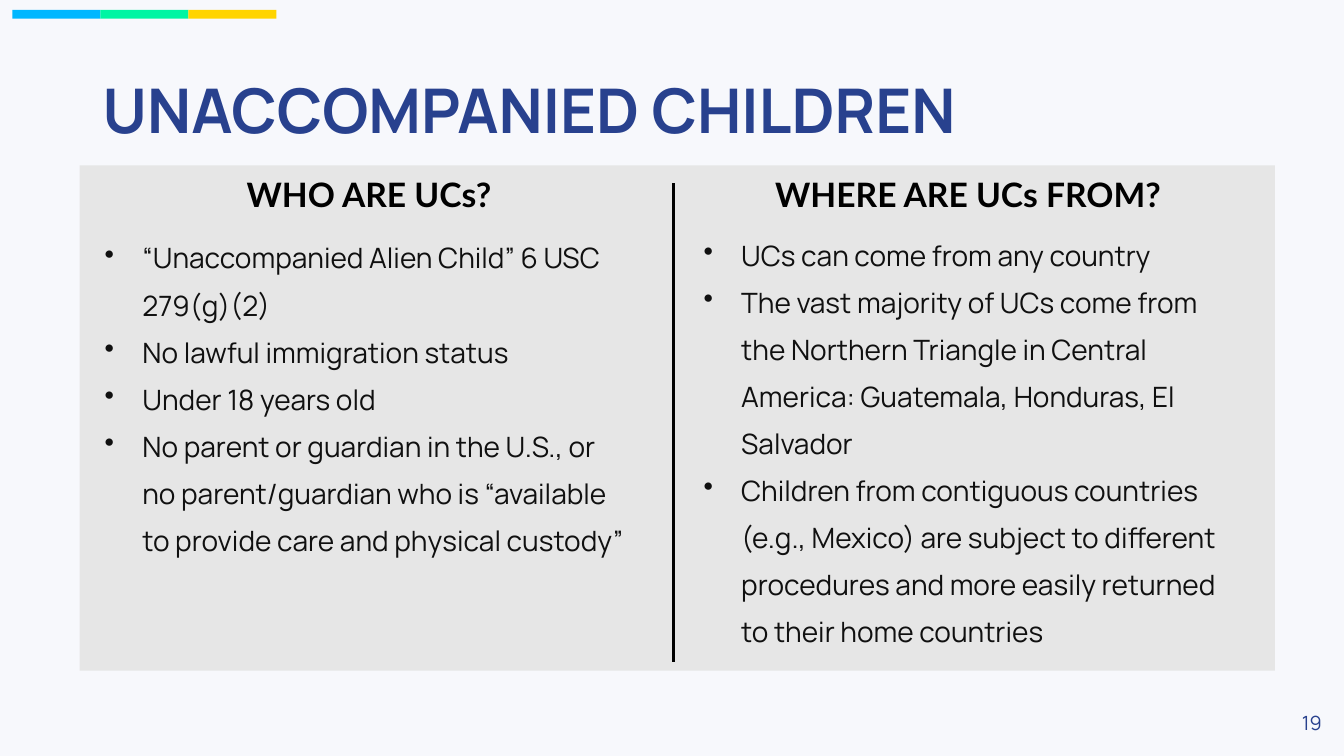
from lxml.etree import SubElement
from pptx import Presentation
from pptx.dml.color import RGBColor
from pptx.enum.shapes import MSO_CONNECTOR as Connector, MSO_SHAPE as Shape
from pptx.enum.text import MSO_ANCHOR as Anchor, PP_ALIGN as Align
from pptx.oxml.ns import qn
from pptx.util import Cm, Pt

BACKGROUND = RGBColor(0xF7, 0xF8, 0xFC)
NAVY = RGBColor(0x28, 0x41, 0x8E)
PANEL_GREY = RGBColor(0xE6, 0xE6, 0xE6)
INK = RGBColor(0x10, 0x10, 0x10)
BLACK = RGBColor(0x00, 0x00, 0x00)
ACCENTS = (
    RGBColor(0x00, 0xB7, 0xFF),
    RGBColor(0x00, 0xF5, 0xA3),
    RGBColor(0xFF, 0xD4, 0x00),
)
ACCENT_WIDTH = 2.22
BULLET_INDENT = Cm(0.95)

WHO_POINTS = (
    "“Unaccompanied Alien Child” 6 USC 279(g)(2)",
    "No lawful immigration status",
    "Under 18 years old",
    "No parent or guardian in the U.S., or no parent/guardian who is "
    "“available to provide care and physical custody”",
)
WHERE_POINTS = (
    "UCs can come from any country",
    "The vast majority of UCs come from the Northern Triangle in Central "
    "America: Guatemala, Honduras, El Salvador",
    "Children from contiguous countries (e.g., Mexico) are subject to different "
    "procedures and more easily returned to their home countries",
)


def add_block(slide, left, top, width, height, color):
    """Draw a plain filled rectangle."""
    block = slide.shapes.add_shape(
        Shape.RECTANGLE, Cm(left), Cm(top), Cm(width), Cm(height))
    block.shadow.inherit = False
    block.fill.solid()
    block.fill.fore_color.rgb = color
    block.line.fill.background()


def add_bullet(paragraph, color):
    """Give a paragraph a hanging coloured bullet."""
    properties = paragraph._p.get_or_add_pPr()
    properties.set("marL", str(BULLET_INDENT))
    properties.set("indent", str(-BULLET_INDENT))
    bullet_color = SubElement(properties, qn("a:buClr"))
    SubElement(bullet_color, qn("a:srgbClr"), val=str(color))
    SubElement(properties, qn("a:buChar"), char="•")


def add_text(slide, lines, left, top, width, height, *, size, color,
             font="Manrope", bold=False, align=Align.LEFT, anchor=Anchor.TOP,
             spacing=None, bullets=False):
    """Add a text box with one paragraph per line."""
    box = slide.shapes.add_textbox(Cm(left), Cm(top), Cm(width), Cm(height))
    frame = box.text_frame
    frame.word_wrap = True
    frame.vertical_anchor = anchor
    for index, line in enumerate(lines):
        paragraph = frame.add_paragraph() if index else frame.paragraphs[0]
        if bullets:
            add_bullet(paragraph, color)
        paragraph.alignment = align
        paragraph.line_spacing = spacing
        run = paragraph.add_run()
        run.text = line
        run.font.name = font
        run.font.size = Pt(size)
        run.font.bold = bold
        run.font.color.rgb = color


def add_divider(slide, x, top, bottom):
    """Draw the vertical rule between the columns."""
    divider = slide.shapes.add_connector(
        Connector.STRAIGHT, Cm(x), Cm(top), Cm(x), Cm(bottom))
    divider.line.color.rgb = BLACK
    divider.line.width = Pt(1.75)
    SubElement(divider._element.spPr, qn("a:effectLst"))


def add_heading(slide, heading, left, width):
    """Add a centred column heading."""
    add_text(slide, [heading], left, 4.27, width, 1.27, size=24, color=BLACK,
             font="Lato", bold=True, align=Align.CENTER)


def add_points(slide, points, left, top, width, height):
    """Add the bulleted points of a column."""
    add_text(slide, points, left, top, width, height, size=20, color=INK,
             spacing=1.4, bullets=True)


def main():
    """Build the slide and save it."""
    deck = Presentation()
    deck.slide_width, deck.slide_height = Cm(33.87), Cm(19.05)
    slide = deck.slides.add_slide(deck.slide_layouts[6])
    slide.background.fill.solid()
    slide.background.fill.fore_color.rgb = BACKGROUND

    for index, accent in enumerate(ACCENTS):
        add_block(slide, 0.31 + index * ACCENT_WIDTH, 0.25, ACCENT_WIDTH, 0.22, accent)
    add_text(slide, ["UNACCOMPANIED CHILDREN"], 2.34, 1.02, 26.77, 3.68, size=44,
             color=NAVY, bold=True, anchor=Anchor.MIDDLE, spacing=0.9)
    add_text(slide, ["19"], 32.11, 17.78, 1.45, 0.86, size=14, color=NAVY,
             align=Align.RIGHT)

    add_block(slide, 2.01, 4.17, 30.12, 12.73, PANEL_GREY)
    add_heading(slide, "WHO ARE UCs?", 2.39, 13.82)
    add_points(slide, WHO_POINTS, 2.39, 5.61, 13.82, 7.16)
    add_heading(slide, "WHERE ARE UCs FROM?", 17.32, 14.15)
    add_points(slide, WHERE_POINTS, 17.48, 5.54, 14.15, 10.69)
    add_divider(slide, 16.97, 4.62, 16.69)

    deck.save("out.pptx")


if __name__ == "__main__":
    main()
